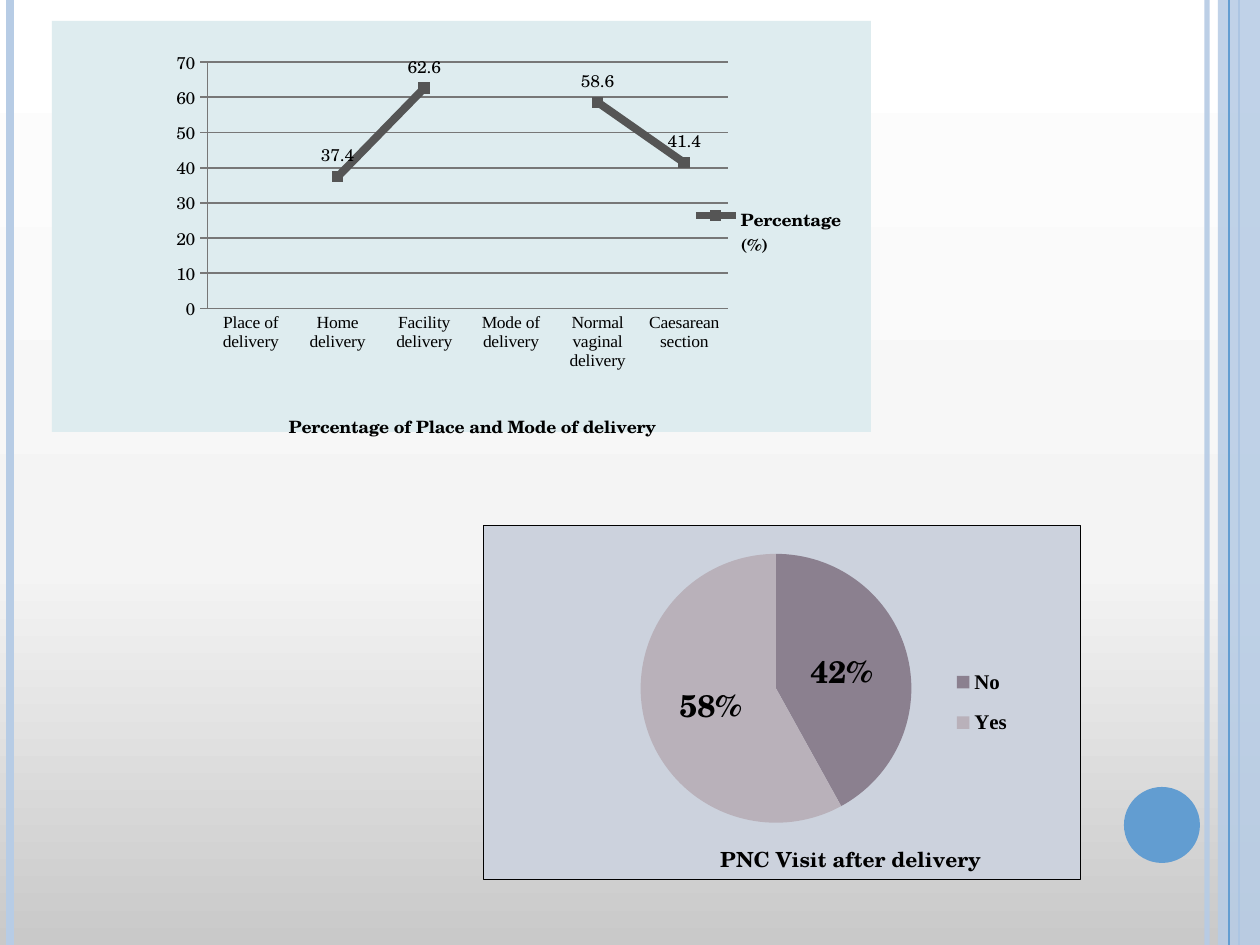
"""Build a slide with a delivery line chart and a PNC visit pie chart."""
from copy import deepcopy
from dataclasses import dataclass
from typing import Any, NamedTuple

from lxml import etree
from pptx import Presentation
from pptx.chart.data import CategoryChartData
from pptx.dml.color import RGBColor
from pptx.enum.chart import (XL_CHART_TYPE, XL_LABEL_POSITION, XL_LEGEND_POSITION,
                             XL_MARKER_STYLE, XL_TICK_MARK)
from pptx.enum.shapes import MSO_CONNECTOR, MSO_SHAPE
from pptx.oxml.ns import qn
from pptx.util import Emu, Pt

LINE = XL_CHART_TYPE.LINE_MARKERS_STACKED
PIE = XL_CHART_TYPE.PIE
ABOVE = XL_LABEL_POSITION.ABOVE
CENTER = XL_LABEL_POSITION.CENTER
RIGHT = XL_LEGEND_POSITION.RIGHT
SQUARE = XL_MARKER_STYLE.SQUARE
NONE = XL_TICK_MARK.NONE
OUT = XL_TICK_MARK.OUTSIDE
STRAIGHT = MSO_CONNECTOR.STRAIGHT
RECT = MSO_SHAPE.RECTANGLE
OVAL = MSO_SHAPE.OVAL
WIDE, HIGH = 1260, 945


@dataclass(frozen=True)
class Theme:
    """Hold colours, fonts and type sizes."""
    pale: str = "B7CCE5"
    blue: str = "629DD1"
    ink: str = "000000"
    grid: str = "777777"
    trend: str = "555555"
    mint: str = "DEECEF"
    mist: str = "CCD2DD"
    slices: tuple = ("8B808F", "B9B1BA")
    sky: tuple = ((0, "C9C9C9"), (0.4, "F4F4F4"), (1, "FFFFFF"))
    body: str = "TeX Gyre Schola"
    serif: str = "Times New Roman"
    small: int = 10
    mid: int = 12
    big: int = 18


class Rule(NamedTuple):
    """Describe a full-height line."""
    x: int
    color: str
    width: float
    alpha: int = 100


class Block(NamedTuple):
    """Describe a filled shape."""
    kind: Any
    box: tuple
    color: str
    alpha: int = 100


class Panel(NamedTuple):
    """Describe a chart and its parts, laid out as fractions."""
    kind: Any
    box: tuple
    name: str
    cats: tuple
    vals: tuple
    fill: str
    edge: str
    plot: tuple
    key: tuple


THEME = Theme()
RULES = (Rule(1207, THEME.pale, 3, 93), Rule(10, THEME.pale, 4.5),
         Rule(1239, THEME.blue, 1.5), Rule(1229, THEME.blue, 0.75))
BLOCKS = (Block(RECT, (1218, 0, 42, 945), THEME.pale, 87),
          Block(OVAL, (1124, 787, 76, 76), THEME.blue))
BIRTHS = Panel(LINE, (52, 21, 819, 424), "Percentage (%)",
               ("Place of delivery", "Home delivery", "Facility delivery",
                "Mode of delivery", "Normal vaginal delivery", "Caesarean section"),
               (None, 37.4, 62.6, None, 58.6, 41.4), THEME.mint, "",
               (0.19, 0.1, 0.635, 0.6), (0.78, 0.45, 0.19, 0.13))
VISITS = Panel(PIE, (483, 525, 598, 357), "Series 1", ("No", "Yes"), (42, 58),
               THEME.mist, THEME.ink, (0.25, 0.08, 0.48, 0.76), (0.77, 0.36, 0.13, 0.28))


def px(n: int) -> Emu:
    """Turn px into EMU."""
    return Emu(round(n * 914400 / 126))


def rgb(code: str) -> RGBColor:
    """Turn a hex code into a colour."""
    return RGBColor.from_string(code)


def fade(shape: Any, alpha: int) -> None:
    """Set the opacity of every colour in a shape."""
    if alpha < 100:
        for tint in shape.element.iter(qn("a:srgbClr")):
            etree.SubElement(tint, qn("a:alpha")).set("val", str(alpha * 1000))


def paint(slide: Any, theme: Theme) -> None:
    """Fill the background with a gradient."""
    fill = slide.background.fill
    fill.gradient()
    stops = slide.element.find(".//" + qn("a:gsLst"))
    stops.append(deepcopy(stops[0]))
    fill.gradient_angle = 90
    for stop, (pos, code) in zip(fill.gradient_stops, theme.sky):
        stop.position = pos
        stop.color.rgb = rgb(code)


def draw_rule(slide: Any, rule: Rule) -> None:
    """Draw a full-height line."""
    line = slide.shapes.add_connector(STRAIGHT, px(rule.x), 0, px(rule.x), px(HIGH))
    line.line.color.rgb = rgb(rule.color)
    line.line.width = Pt(rule.width)
    etree.SubElement(line.element.spPr, qn("a:effectLst"))
    fade(line, rule.alpha)


def draw_block(slide: Any, block: Block) -> None:
    """Draw a filled shape."""
    shape = slide.shapes.add_shape(block.kind, *map(px, block.box))
    shape.shadow.inherit = False
    shape.fill.solid()
    shape.fill.fore_color.rgb = rgb(block.color)
    shape.line.fill.background()
    fade(shape, block.alpha)


def style(font: Any, size: int, bold: bool, face: str) -> None:
    """Set a chart font."""
    font.size, font.bold, font.name = Pt(size), bold, face
    font.color.rgb = rgb(THEME.ink)


def place(node: Any, spot: int, box: tuple, inner: bool = False) -> None:
    """Give a chart part a manual layout at a child index."""
    for old in node.findall(qn("c:layout")):
        node.remove(old)
    frame = etree.Element(qn("c:layout"))
    node.insert(spot, frame)
    manual = etree.SubElement(frame, qn("c:manualLayout"))
    pairs = [("layoutTarget", "inner")] if inner else []
    pairs += [("xMode", "edge"), ("yMode", "edge"), *zip("xywh", map(str, box))]
    for tag, val in pairs:
        etree.SubElement(manual, qn("c:" + tag)).set("val", val)


def back(chart: Any, fill: str, edge: str) -> None:
    """Set the fill and border of a chart."""
    props = etree.Element(qn("c:spPr"))
    chart.element.find(qn("c:chart")).addnext(props)
    solid = etree.SubElement(props, qn("a:solidFill"))
    etree.SubElement(solid, qn("a:srgbClr")).set("val", fill)
    line = etree.SubElement(props, qn("a:ln"), w=str(Pt(0.75)))
    ink = etree.SubElement(line, qn("a:solidFill" if edge else "a:noFill"))
    if edge:
        etree.SubElement(ink, qn("a:srgbClr")).set("val", edge)


def add_title(title: Any, text: str, size: int, spot: tuple) -> None:
    """Write and place a bold title."""
    run = title.text_frame.paragraphs[0].add_run()
    run.text = text
    style(run.font, size, True, THEME.body)
    place(title._element, 1, spot)


def add_panel(slide: Any, panel: Panel) -> Any:
    """Add a chart with its plot, legend and background."""
    data = CategoryChartData()
    data.categories = panel.cats
    data.add_series(panel.name, panel.vals)
    chart = slide.shapes.add_chart(panel.kind, *map(px, panel.box), data).chart
    style(chart.font, THEME.small, False, THEME.body)
    chart.has_title = False
    chart.has_legend = True
    chart.legend.position = RIGHT
    chart.legend.include_in_layout = False
    place(chart.legend._element, 1, panel.key)
    place(chart.element.find(".//" + qn("c:plotArea")), 0, panel.plot, True)
    back(chart, panel.fill, panel.edge)
    return chart


def add_births(slide: Any) -> None:
    """Add the line chart of place and mode of delivery."""
    chart = add_panel(slide, BIRTHS)
    style(chart.legend.font, THEME.small, True, THEME.body)
    plot = chart.plots[0]
    plot.vary_by_categories = False
    cat, val = chart.category_axis, chart.value_axis
    style(cat.tick_labels.font, THEME.small, False, THEME.serif)
    cat.major_tick_mark, val.major_tick_mark = NONE, OUT
    val.minimum_scale, val.maximum_scale, val.major_unit = 0, 70, 10
    for line in (cat.format.line, val.format.line, val.major_gridlines.format.line):
        line.color.rgb = rgb(THEME.grid)
        line.width = Pt(1)
    add_title(cat.axis_title, "Percentage of Place and Mode of delivery",
              THEME.small, (0.285, 0.945))
    trend = plot.series[0]
    trend.smooth = False
    trend.format.line.color.rgb = rgb(THEME.trend)
    trend.format.line.width = Pt(4.5)
    trend.marker.style, trend.marker.size = SQUARE, 6
    trend.marker.format.fill.solid()
    trend.marker.format.fill.fore_color.rgb = rgb(THEME.trend)
    trend.marker.format.line.color.rgb = rgb(THEME.trend)
    labels = trend.data_labels
    labels.show_value, labels.position = True, ABOVE
    style(labels.font, THEME.small, False, THEME.body)


def add_visits(slide: Any) -> None:
    """Add the pie chart of visits after delivery."""
    chart = add_panel(slide, VISITS)
    style(chart.legend.font, THEME.mid, True, THEME.serif)
    chart.has_title = True
    add_title(chart.chart_title, "PNC Visit after delivery", THEME.mid, (0.39, 0.88))
    plot = chart.plots[0]
    plot.vary_by_categories = True
    for i, code in enumerate(THEME.slices):
        fill = plot.series[0].points[i].format.fill
        fill.solid()
        fill.fore_color.rgb = rgb(code)
    labels = plot.series[0].data_labels
    labels.show_value, labels.show_percentage = False, True
    labels.number_format, labels.number_format_is_linked = "0%", False
    labels.position = CENTER
    style(labels.font, THEME.big, True, THEME.body)


def main() -> None:
    """Build and save the slide."""
    deck = Presentation()
    deck.slide_width, deck.slide_height = px(WIDE), px(HIGH)
    slide = deck.slides.add_slide(deck.slide_layouts[6])
    paint(slide, THEME)
    for rule in RULES[:3]:
        draw_rule(slide, rule)
    draw_block(slide, BLOCKS[0])
    draw_rule(slide, RULES[3])
    draw_block(slide, BLOCKS[1])
    add_births(slide)
    add_visits(slide)
    deck.save("out.pptx")


if __name__ == "__main__":
    main()
